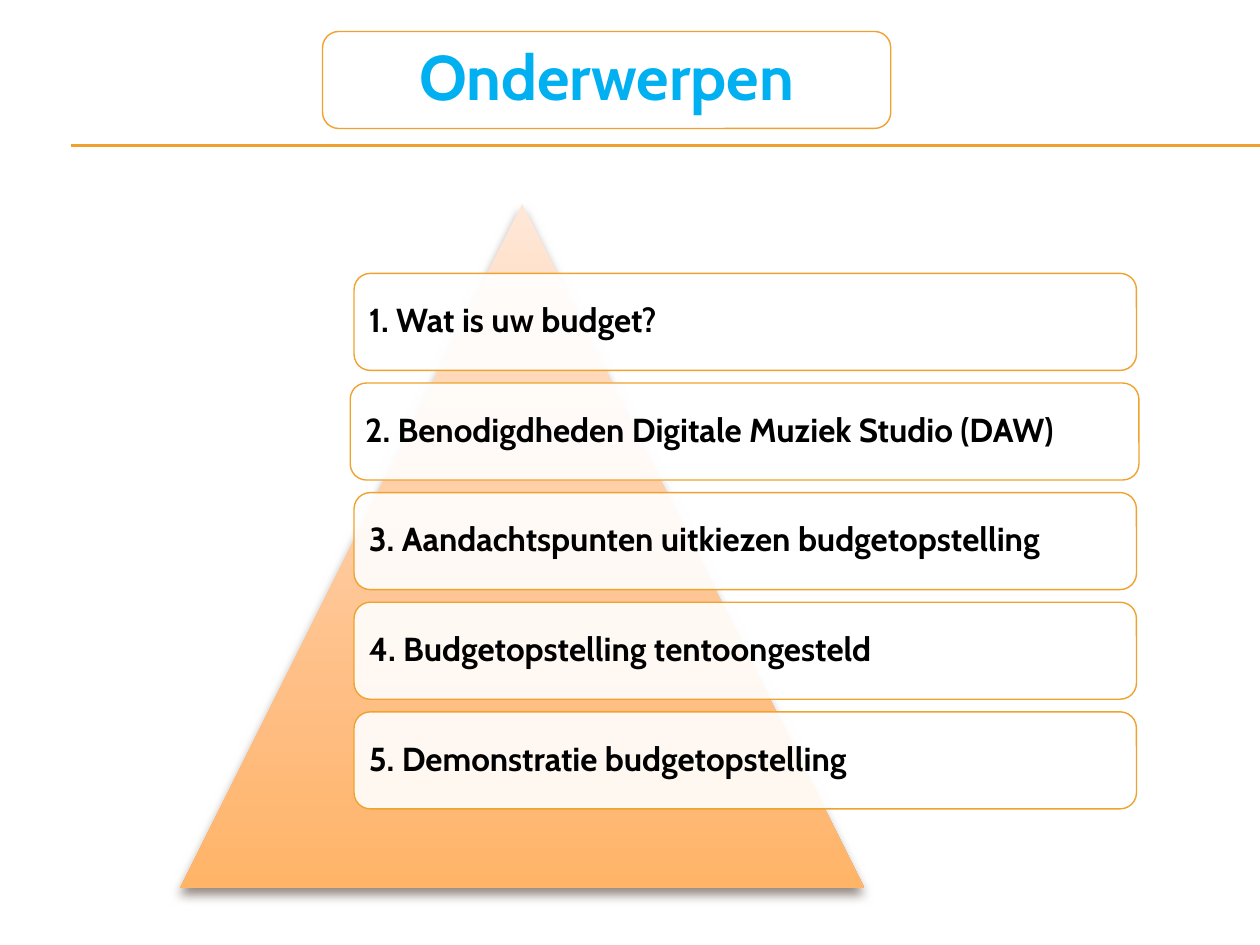
"""Build the topics slide: a title, a pyramid and five numbered topic boxes."""
from dataclasses import dataclass

import lxml.etree
import pptx
import pptx.dml.color
import pptx.enum.shapes
import pptx.enum.text
import pptx.oxml
import pptx.oxml.ns
import pptx.util

Inches = pptx.util.Inches
RGBColor = pptx.dml.color.RGBColor
Shape = pptx.enum.shapes.MSO_SHAPE
Align = pptx.enum.text.PP_ALIGN
qn = pptx.oxml.ns.qn

AMBER = RGBColor(0xF0, 0xA2, 0x2E)
WHITE = RGBColor(0xFF, 0xFF, 0xFF)
BLACK = RGBColor(0x00, 0x00, 0x00)
BLUE = RGBColor(0x00, 0xB0, 0xF0)
BROWN = RGBColor(0x4E, 0x3B, 0x30)
PYRAMID_STOPS = (
    (0, RGBColor(0xFF, 0xE7, 0xD7)),
    (72, RGBColor(0xFF, 0xBE, 0x84)),
    (100, RGBColor(0xFF, 0xB4, 0x68)),
)
BOX_HEIGHT = 0.77
TOPIC_TOP = 2.17
TOPIC_PITCH = 0.87


@dataclass(frozen=True)
class Topic:
    text: str
    left: float = 2.81
    width: float = 6.21


TOPICS = (
    Topic("1. Wat is uw budget?"),
    Topic("2. Benodigdheden Digitale Muziek Studio (DAW)", left=2.78, width=6.26),
    Topic("3. Aandachtspunten uitkiezen budgetopstelling"),
    Topic("4. Budgetopstelling tentoongesteld"),
    Topic("5. Demonstratie budgetopstelling"),
)


def add_rule(page, top: float) -> None:
    rule = page.shapes.add_connector(
        pptx.enum.shapes.MSO_CONNECTOR.STRAIGHT,
        Inches(0.56), Inches(top), Inches(10), Inches(top),
    )
    rule.line.color.rgb = AMBER
    rule.line.width = pptx.util.Pt(0.75)
    lxml.etree.SubElement(rule._element.spPr, qn("a:effectLst"))


def add_pyramid(page) -> None:
    pyramid = page.shapes.add_shape(
        Shape.ISOSCELES_TRIANGLE, Inches(1.43), Inches(1.62), Inches(5.43), Inches(5.43)
    )
    pyramid.line.fill.background()
    pyramid.shadow.inherit = False
    namespace = pptx.oxml.ns.nsdecls("a")
    stops = "".join(
        f'<a:gs pos="{position * 1000}"><a:srgbClr val="{color}"/></a:gs>'
        for position, color in PYRAMID_STOPS
    )
    properties = pyramid._element.spPr
    properties.find(qn("a:prstGeom")).addnext(pptx.oxml.parse_xml(
        f'<a:gradFill {namespace} rotWithShape="1"><a:gsLst>{stops}</a:gsLst>'
        '<a:lin ang="5400000" scaled="0"/></a:gradFill>'
    ))
    properties.find(qn("a:effectLst")).append(pptx.oxml.parse_xml(
        f'<a:outerShdw {namespace} blurRad="{pptx.util.Pt(6)}" dist="{pptx.util.Pt(4)}"'
        f' dir="5400000" rotWithShape="0"><a:srgbClr val="{BROWN}">'
        '<a:alpha val="60000"/></a:srgbClr></a:outerShdw>'
    ))


def write_text(box, text: str, *, size: float, color: RGBColor, align: Align) -> None:
    frame = box.text_frame
    frame.word_wrap = True
    frame.vertical_anchor = pptx.enum.text.MSO_ANCHOR.MIDDLE
    frame.margin_left = frame.margin_right = Inches(0.08)
    frame.margin_top = frame.margin_bottom = Inches(0.08)
    para = frame.paragraphs[0]
    para.alignment = align
    para.line_spacing = 0.9
    span = para.add_run()
    span.text = text
    span.font.name = "Cabin"
    span.font.size = pptx.util.Pt(size)
    span.font.bold = True
    span.font.color.rgb = color


def add_box(page, left: float, top: float, width: float):
    box = page.shapes.add_shape(
        Shape.ROUNDED_RECTANGLE, Inches(left), Inches(top), Inches(width), Inches(BOX_HEIGHT)
    )
    box.shadow.inherit = False
    box.fill.solid()
    box.fill.fore_color.rgb = WHITE
    color = box._element.spPr.find(qn("a:solidFill")).find(qn("a:srgbClr"))
    lxml.etree.SubElement(color, qn("a:alpha"), val="90000")
    box.line.color.rgb = AMBER
    box.line.width = pptx.util.Pt(0.79)
    return box


def main() -> None:
    deck = pptx.Presentation()
    deck.slide_width, deck.slide_height = Inches(10), Inches(7.5)
    page = deck.slides.add_slide(deck.slide_layouts[6])
    for top in (1.15, 1.16):
        add_rule(page, top)
    add_pyramid(page)
    for index, topic in enumerate(TOPICS):
        box = add_box(page, topic.left, TOPIC_TOP + index * TOPIC_PITCH, topic.width)
        write_text(box, topic.text, size=19, color=BLACK, align=Align.LEFT)
    title = add_box(page, 2.56, 0.25, 4.51)
    write_text(title, "Onderwerpen", size=36, color=BLUE, align=Align.CENTER)
    deck.save("out.pptx")


if __name__ == "__main__":
    main()
